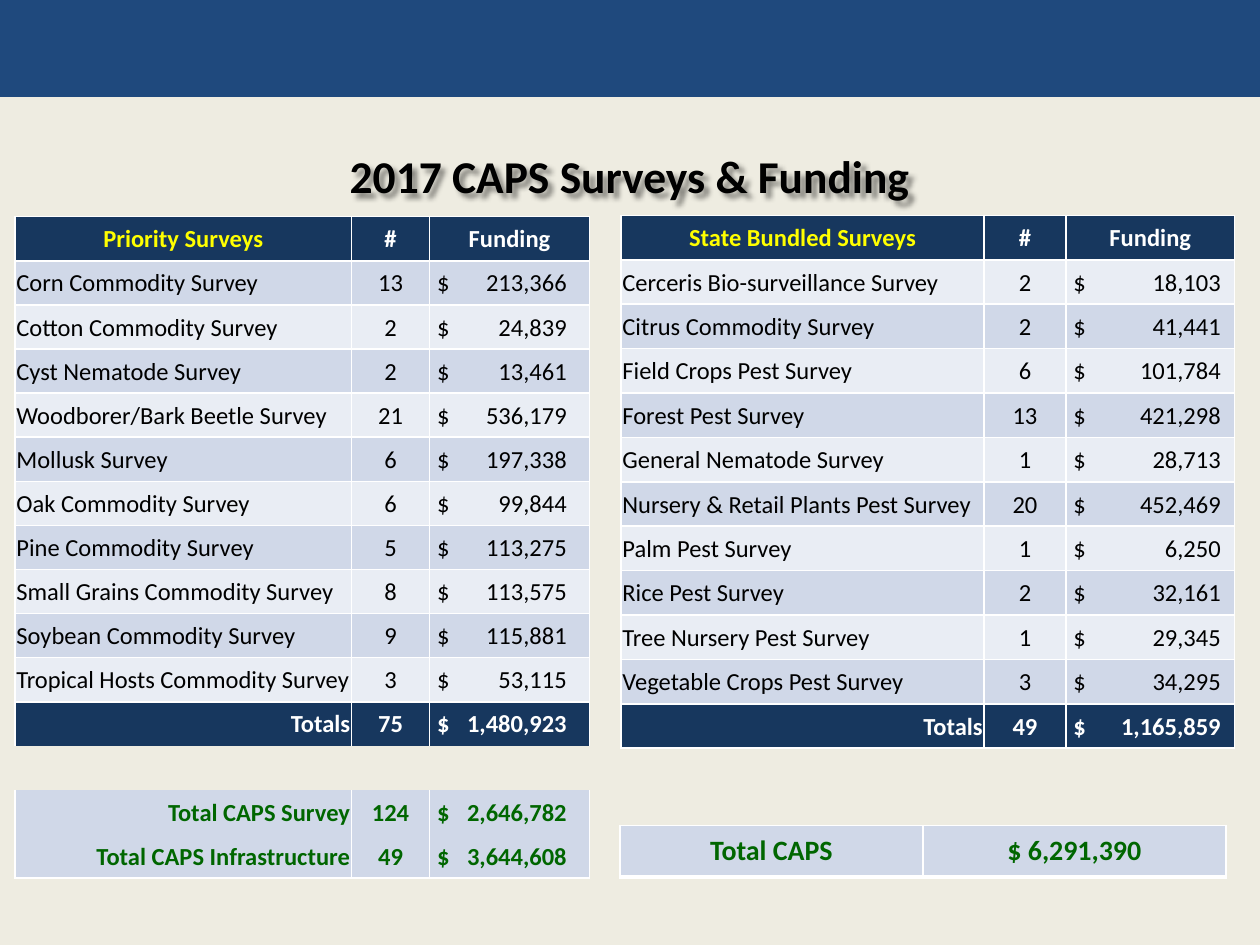
from lxml import etree
from pptx import Presentation
from pptx.dml.color import RGBColor
from pptx.enum import shapes, text
from pptx.oxml import ns
from pptx.util import Inches, Pt

NAVY = RGBColor(0x17, 0x37, 0x5E)
BLUE = RGBColor(0x1F, 0x49, 0x7D)
CREAM = RGBColor(0xEE, 0xEC, 0xE1)
BAND_DARK = RGBColor(0xD0, 0xD8, 0xE8)
BAND_LIGHT = RGBColor(0xE9, 0xED, 0xF4)
YELLOW = RGBColor(0xFF, 0xFF, 0x00)
GREEN = RGBColor(0x00, 0x66, 0x00)
WHITE = RGBColor(0xFF, 0xFF, 0xFF)
BLACK = RGBColor(0x00, 0x00, 0x00)

LEFT = text.PP_ALIGN.LEFT
CENTER = text.PP_ALIGN.CENTER
RIGHT = text.PP_ALIGN.RIGHT
ALL_SIDES = {"L": 1, "R": 1, "T": 1, "B": 1}

PRIORITY_SURVEYS = [
    ("Corn Commodity Survey", "13", "213,366"),
    ("Cotton Commodity Survey", "2", "24,839"),
    ("Cyst Nematode Survey", "2", "13,461"),
    ("Woodborer/Bark Beetle Survey", "21", "536,179"),
    ("Mollusk Survey", "6", "197,338"),
    ("Oak Commodity Survey", "6", "99,844"),
    ("Pine Commodity Survey", "5", "113,275"),
    ("Small Grains Commodity Survey", "8", "113,575"),
    ("Soybean Commodity Survey", "9", "115,881"),
    ("Tropical Hosts Commodity Survey", "3", "53,115"),
]
BUNDLED_SURVEYS = [
    ("Cerceris Bio-surveillance Survey", "2", "18,103"),
    ("Citrus Commodity Survey", "2", "41,441"),
    ("Field Crops Pest Survey", "6", "101,784"),
    ("Forest Pest Survey", "13", "421,298"),
    ("General Nematode Survey", "1", "28,713"),
    ("Nursery & Retail Plants Pest Survey", "20", "452,469"),
    ("Palm Pest Survey", "1", "6,250"),
    ("Rice Pest Survey", "2", "32,161"),
    ("Tree Nursery Pest Survey", "1", "29,345"),
    ("Vegetable Crops Pest Survey", "3", "34,295"),
]
SUMMARY = [
    ("Total CAPS Survey", "124", "2,646,782"),
    ("Total CAPS Infrastructure", "49", "3,644,608"),
]


def add_element(parent, tag, **attributes):
    values = {name: str(value) for name, value in attributes.items()}
    return etree.SubElement(parent, ns.qn(tag), values)


def write_text(frame, content, size=14, color=BLACK, bold=False, align=LEFT, tab=None):
    paragraph = frame.paragraphs[0]
    paragraph.alignment = align
    if tab:
        stops = add_element(paragraph._p.get_or_add_pPr(), "a:tabLst")
        add_element(stops, "a:tab", pos=Inches(tab), algn="r")
    run = paragraph.add_run()
    run.text = content
    run.font.name = "Calibri"
    run.font.size = Pt(size)
    run.font.bold = bold
    run.font.color.rgb = color


def style_cell(cell, fill=None, borders=ALL_SIDES):
    cell.vertical_anchor = text.MSO_ANCHOR.MIDDLE
    properties = cell._tc.get_or_add_tcPr()
    for side in "LRTB":
        width = borders.get(side, 0)
        line = add_element(properties, f"a:ln{side}", w=Pt(width))
        if width:
            solid = add_element(line, "a:solidFill")
            add_element(solid, "a:srgbClr", val=WHITE)
        else:
            add_element(line, "a:noFill")
    if fill is None:
        cell.fill.background()
    else:
        cell.fill.solid()
        cell.fill.fore_color.rgb = fill


def add_grid(slide, box, widths, row_count):
    left, top, width, height = map(Inches, box)
    table = slide.shapes.add_table(row_count, len(widths), left, top, width, height).table
    table.first_row = False
    table.horz_banding = False
    for column, column_width in zip(table.columns, widths):
        column.width = Inches(column_width)
    for row in table.rows:
        row.height = Inches(box[3] / row_count)
    return table


def fill_row(table, row, values, fill, tab=None, borders=ALL_SIDES,
             name_align=LEFT, name_color=None, color=BLACK, bold=False):
    for column, value in enumerate(values):
        cell = table.cell(row, column)
        is_money = column == 2 and tab is not None
        style_cell(cell, fill, borders)
        cell.margin_left = Inches(0.06 if is_money else 0.01)
        cell.margin_right = cell.margin_top = Inches(0.01)
        cell.margin_bottom = 0
        if value:
            write_text(
                cell.text_frame,
                f"$\t{value}" if is_money else value,
                color=name_color if column == 0 and name_color else color,
                bold=bold,
                align=name_align if column == 0 else LEFT if is_money else CENTER,
                tab=tab if is_money else None,
            )


def add_survey_table(slide, box, widths, heading, surveys, totals, bands, tab, summary=()):
    row_count = len(surveys) + 2 + (len(summary) + 1 if summary else 0)
    table = add_grid(slide, box, widths, row_count)
    fill_row(table, 0, (heading, "#", "Funding"), NAVY, name_align=CENTER,
             name_color=YELLOW, color=WHITE, bold=True)
    for index, survey in enumerate(surveys):
        fill_row(table, index + 1, survey, bands[index % 2], tab)
    total_row = len(surveys) + 1
    total_borders = {"L": 1, "R": 1, "T": 1} if summary else ALL_SIDES
    fill_row(table, total_row, ("Totals", *totals), NAVY, tab, total_borders,
             name_align=RIGHT, color=WHITE, bold=True)
    if summary:
        fill_row(table, total_row + 1, ("", "", ""), None, borders={})
    for row, values in enumerate(summary, total_row + 2):
        borders = {"L": 1, "R": 1, "B": int(row == row_count - 1)}
        fill_row(table, row, values, BAND_DARK, tab, borders,
                 name_align=RIGHT, color=GREEN, bold=True)


def add_grand_total(slide, box):
    table = add_grid(slide, box, [box[2] / 2] * 2, 1)
    for column, value in enumerate(("Total CAPS", "$ 6,291,390")):
        cell = table.cell(0, column)
        style_cell(cell, BAND_DARK, {**ALL_SIDES, "B": 3})
        write_text(cell.text_frame, value, size=16, color=GREEN, bold=True, align=CENTER)


def add_banner(slide, box):
    banner = slide.shapes.add_shape(shapes.MSO_SHAPE.RECTANGLE, *map(Inches, box))
    banner.shadow.inherit = False
    banner.fill.solid()
    banner.fill.fore_color.rgb = BLUE
    banner.line.fill.background()


def add_title(slide, box):
    title = slide.shapes.add_textbox(*map(Inches, box))
    frame = title.text_frame
    frame.word_wrap = True
    frame.vertical_anchor = text.MSO_ANCHOR.MIDDLE
    write_text(frame, "2017 CAPS Surveys & Funding", size=26, bold=True, align=CENTER)
    effects = add_element(title._element.spPr, "a:effectLst")
    shadow = add_element(effects, "a:outerShdw", blurRad=Pt(3), dist=Pt(3), dir=2700000)
    shade = add_element(shadow, "a:srgbClr", val=BLACK)
    add_element(shade, "a:alpha", val=43000)


def main():
    presentation = Presentation()
    presentation.slide_width = Inches(10)
    presentation.slide_height = Inches(7.5)
    slide = presentation.slides.add_slide(presentation.slide_layouts[6])
    slide.background.fill.solid()
    slide.background.fill.fore_color.rgb = CREAM

    add_banner(slide, (0, 0, 10, 0.77))
    add_survey_table(slide, (0.12, 1.72, 4.56, 5.25), (2.67, 0.62, 1.27),
                     "Priority Surveys", PRIORITY_SURVEYS, ("75", "1,480,923"),
                     (BAND_DARK, BAND_LIGHT), 1.03, SUMMARY)
    add_survey_table(slide, (4.93, 1.71, 4.87, 4.23), (2.88, 0.65, 1.34),
                     "State Bundled Surveys", BUNDLED_SURVEYS, ("49", "1,165,859"),
                     (BAND_LIGHT, BAND_DARK), 1.17)
    add_title(slide, (0.5, 1, 9, 0.78))
    add_grand_total(slide, (4.92, 6.55, 4.81, 0.41))
    presentation.save("out.pptx")


if __name__ == "__main__":
    main()
